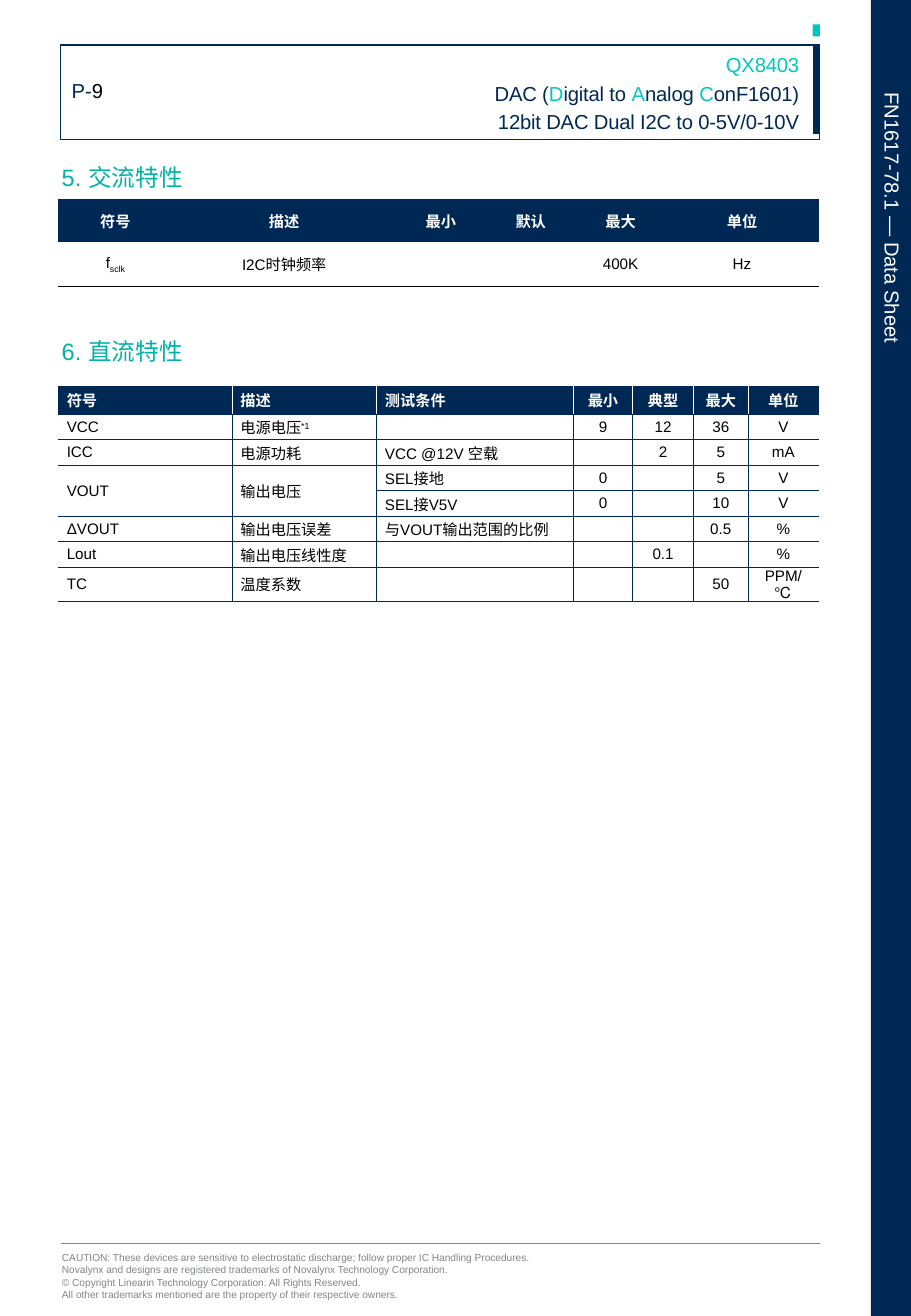
from lxml import etree
from pptx import Presentation
from pptx.dml.color import RGBColor
from pptx.enum.shapes import MSO_CONNECTOR, MSO_SHAPE
from pptx.enum.text import MSO_ANCHOR, MSO_AUTO_SIZE, PP_ALIGN
from pptx.oxml.ns import qn
from pptx.util import Inches, Pt

LEFT, CENTER, RIGHT = PP_ALIGN.LEFT, PP_ALIGN.CENTER, PP_ALIGN.RIGHT
TOP, MIDDLE = MSO_ANCHOR.TOP, MSO_ANCHOR.MIDDLE
NO_FIT = MSO_AUTO_SIZE.NONE
RECT, STRAIGHT = MSO_SHAPE.RECTANGLE, MSO_CONNECTOR.STRAIGHT
NAVY, TEAL, HEADING = "002854", "00C8BE", "01B2A9"
GRAY, WHITE, BLACK = "828585", "FFFFFF", "000000"

AC_COLS = [0.94, 1.84, 0.74, 0.74, 0.74, 1.26]
AC_ROWS = [
    ["符号", "描述", "最小", "默认", "最大", "单位"],
    [[("f", {}), ("sclk", {"baseline": -25})], "I2C时钟频率", "", "", "400K", "Hz"],
]
DC_COLS = [1.43, 1.19, 1.62, 0.49, 0.5, 0.45, 0.58]
DC_ROWS = [
    ["符号", "描述", "测试条件", "最小", "典型", "最大", "单位"],
    ["VCC", [("电源电压", {}), ("*1", {"baseline": 30})], "", "9", "12", "36", "V"],
    ["ICC", "电源功耗", "VCC @12V 空载", "", "2", "5", "mA"],
    ["VOUT", "输出电压", "SEL接地", "0", "", "5", "V"],
    ["", "", "SEL接V5V", "0", "", "10", "V"],
    ["ΔVOUT", "输出电压误差", "与VOUT输出范围的比例", "", "", "0.5", "%"],
    ["Lout", "输出电压线性度", "", "", "0.1", "", "%"],
    ["TC", "温度系数", "", "", "", "50", "PPM/℃"],
]


def rgb(value):
    """Turn a hex string into a colour."""
    return RGBColor.from_string(value)


def write(tf, paragraphs, align=LEFT, gap=0, **fmt):
    """Fill a text frame; a paragraph is a string or a list of (text, format) runs."""
    for i, runs in enumerate(paragraphs):
        p = tf.add_paragraph() if i else tf.paragraphs[0]
        p.alignment = align
        p.space_before = Pt(gap if i else 0)
        if not runs:
            size = str(fmt["size"] * 100)
            etree.SubElement(p._p, qn("a:endParaRPr"), sz=size)
            continue
        for text, extra in [(runs, {})] if isinstance(runs, str) else runs:
            style = {**fmt, **extra}
            r = p.add_run()
            r.text = text
            r.font.name = "Arial"
            r.font.size = Pt(style["size"])
            r.font.bold = style.get("bold", False)
            r.font.color.rgb = rgb(style["color"])
            if "baseline" in style:
                r.font._element.set("baseline", str(style["baseline"] * 1000))
            if "spacing" in style:
                r.font._element.set("spc", str(style["spacing"]))


def frame(sp, anchor=TOP, insets=(0, 0.01, 0, 0)):
    """Prepare the text frame of a shape."""
    tf = sp.text_frame
    tf.word_wrap = True
    tf.auto_size = NO_FIT
    tf.vertical_anchor = anchor
    tf.margin_left, tf.margin_top, tf.margin_right, tf.margin_bottom = map(Inches, insets)
    return tf


def add_box(s, left, top, width, height, **kwargs):
    """Add a text box and return its frame."""
    return frame(s.shapes.add_textbox(*map(Inches, (left, top, width, height))), **kwargs)


def add_rect(s, left, top, width, height, fill=None, line=None):
    """Add a plain rectangle."""
    sp = s.shapes.add_shape(RECT, *map(Inches, (left, top, width, height)))
    sp.shadow.inherit = False
    if fill:
        sp.fill.solid()
        sp.fill.fore_color.rgb = rgb(fill)
    else:
        sp.fill.background()
    if line:
        sp.line.color.rgb = rgb(line)
        sp.line.width = Pt(0.75)
    else:
        sp.line.fill.background()


def add_line(s, x1, y1, x2, y2, color, width):
    """Add a straight line without a shadow."""
    c = s.shapes.add_connector(STRAIGHT, *map(Inches, (x1, y1, x2, y2)))
    c.line.color.rgb = rgb(color)
    c.line.width = Pt(width)
    etree.SubElement(c._element.spPr, qn("a:effectLst"))


def set_borders(cell, **edges):
    """Set the L, R, T and B borders of a cell; a missing edge is not drawn."""
    tcPr = cell._tc.get_or_add_tcPr()
    for side in "LRTB":
        color, width = edges.get(side) or (None, 0)
        ln = etree.SubElement(tcPr, qn(f"a:ln{side}"), w=str(int(Pt(width))))
        if color:
            fill = etree.SubElement(ln, qn("a:solidFill"))
            etree.SubElement(fill, qn("a:srgbClr"), val=color)
        else:
            etree.SubElement(ln, qn("a:noFill"))


def add_grid(s, left, top, cols, heights, rows, borders, left_cols=0):
    """Add a table whose first row is a navy header."""
    box = map(Inches, (left, top, sum(cols), sum(heights)))
    table = s.shapes.add_table(len(rows), len(cols), *box).table
    table.first_row = table.horz_banding = False
    for col, width in zip(table.columns, cols):
        col.width = Inches(width)
    for i, (row, height) in enumerate(zip(rows, heights)):
        table.rows[i].height = Inches(height)
        for j, text in enumerate(row):
            cell = table.cell(i, j)
            cell.margin_left = cell.margin_right = Inches(0.07)
            cell.margin_top = cell.margin_bottom = 0
            cell.vertical_anchor = MIDDLE
            write(cell.text_frame, [text], size=9, bold=i == 0,
                  color=BLACK if i else WHITE, align=LEFT if j < left_cols else CENTER)
            set_borders(cell, **borders(i, j))
            cell.fill.solid()
            cell.fill.fore_color.rgb = rgb(WHITE if i else NAVY)
    return table


def ac_borders(i, j):
    """Give the borders of a cell in the AC table."""
    if i == 0:
        return {"T": (NAVY, 1), "B": (NAVY, 0.5)}
    return {"T": (NAVY, 0.5), "B": (BLACK, 1)}


def dc_borders(i, j):
    """Give the borders of a cell in the DC table."""
    side = (NAVY if i else WHITE, 0.5)
    return {
        "L": side if j else None,
        "R": side if j < len(DC_COLS) - 1 else None,
        "T": (NAVY, 0.5) if i else None,
        "B": (NAVY, 1 if i == len(DC_ROWS) - 1 else 0.5),
    }


def add_header(s, left, top, width, height):
    """Draw the framed header with page number and title."""
    right = left + width
    add_rect(s, right - 0.06, top - 0.17, 0.06, 0.1, fill="00C7BD")
    add_line(s, right - 0.03, top, right - 0.03, top + 0.73, NAVY, 4.28)
    add_rect(s, left, top, width, height, line=NAVY)
    tf = add_box(s, left + 0.09, top + 0.26, 0.65, 0.22, anchor=MIDDLE)
    write(tf, [[("P-", {"color": NAVY}), ("9", {})]], size=12, color=BLACK)
    title = s.shapes.title
    title.left, title.top = Inches(right - 3.55), Inches(top + 0.03)
    title.width, title.height = Inches(3.38), Inches(0.7)
    teal = {"color": TEAL}
    subject = [("DAC (", {}), ("D", teal), ("igital to ", {}), ("A", teal),
               ("nalog ", {}), ("C", teal), ("onF1601)", {})]
    write(frame(title, MIDDLE, (0, 0.03, 0, 0)),
          [[("QX8403", teal)], subject, "12bit DAC Dual I2C to 0-5V/0-10V"],
          align=RIGHT, gap=2.5, size=12, color=NAVY, spacing=-10)


def add_sidebar(s, left, top, width, height):
    """Draw the navy band with its rotated label."""
    add_rect(s, left, top, width, height, fill=NAVY)
    tf = add_box(s, left + 0.08, top + 0.75, 0.2, 2.59)
    tf._txBody.bodyPr.set("vert", "vert")
    write(tf, ["FN1617-78.1 — Data Sheet"], size=12, color=WHITE)


def add_heading(s, left, top, text):
    """Write a section heading."""
    tf = add_box(s, left, top, 2.01, 0.34, insets=(0.1, 0.05, 0.1, 0.05))
    write(tf, [text], size=14, color=HEADING)


def add_footer(s, left, top, width):
    """Draw the rule and the legal notes below it."""
    add_line(s, left, top, left + width, top, GRAY, 0.5)
    write(add_box(s, left + 0.01, top + 0.06, 3.95, 0.43), [
        "CAUTION: These devices are sensitive to electrostatic discharge; follow proper IC "
        "Handling Procedures. Novalynx and designs are registered trademarks of Novalynx "
        "Technology Corporation.",
        "© Copyright Linearin Technology Corporation. All Rights Reserved.",
        "All other trademarks mentioned are the property of their respective owners.",
    ], size=6, color=GRAY)


def main():
    """Build the data sheet page."""
    prs = Presentation()
    prs.slide_width, prs.slide_height = Inches(7.5), Inches(10.83)
    s = prs.slides.add_slide(prs.slide_layouts[5])
    add_sidebar(s, 7.17, 0, 0.33, 10.83)
    add_header(s, 0.5, 0.37, 6.25, 0.78)
    add_heading(s, 0.41, 1.29, "5. 交流特性")
    add_grid(s, 0.48, 1.64, AC_COLS, [0.35, 0.37], AC_ROWS, ac_borders)
    add_heading(s, 0.41, 2.72, "6. 直流特性")
    dc = add_grid(s, 0.48, 3.18, DC_COLS, [0.23] + [0.21] * 7, DC_ROWS, dc_borders, left_cols=3)
    for j in range(2):
        dc.cell(3, j).merge(dc.cell(4, j))
    add_footer(s, 0.5, 10.23, 6.25)
    prs.save("out.pptx")


if __name__ == "__main__":
    main()
